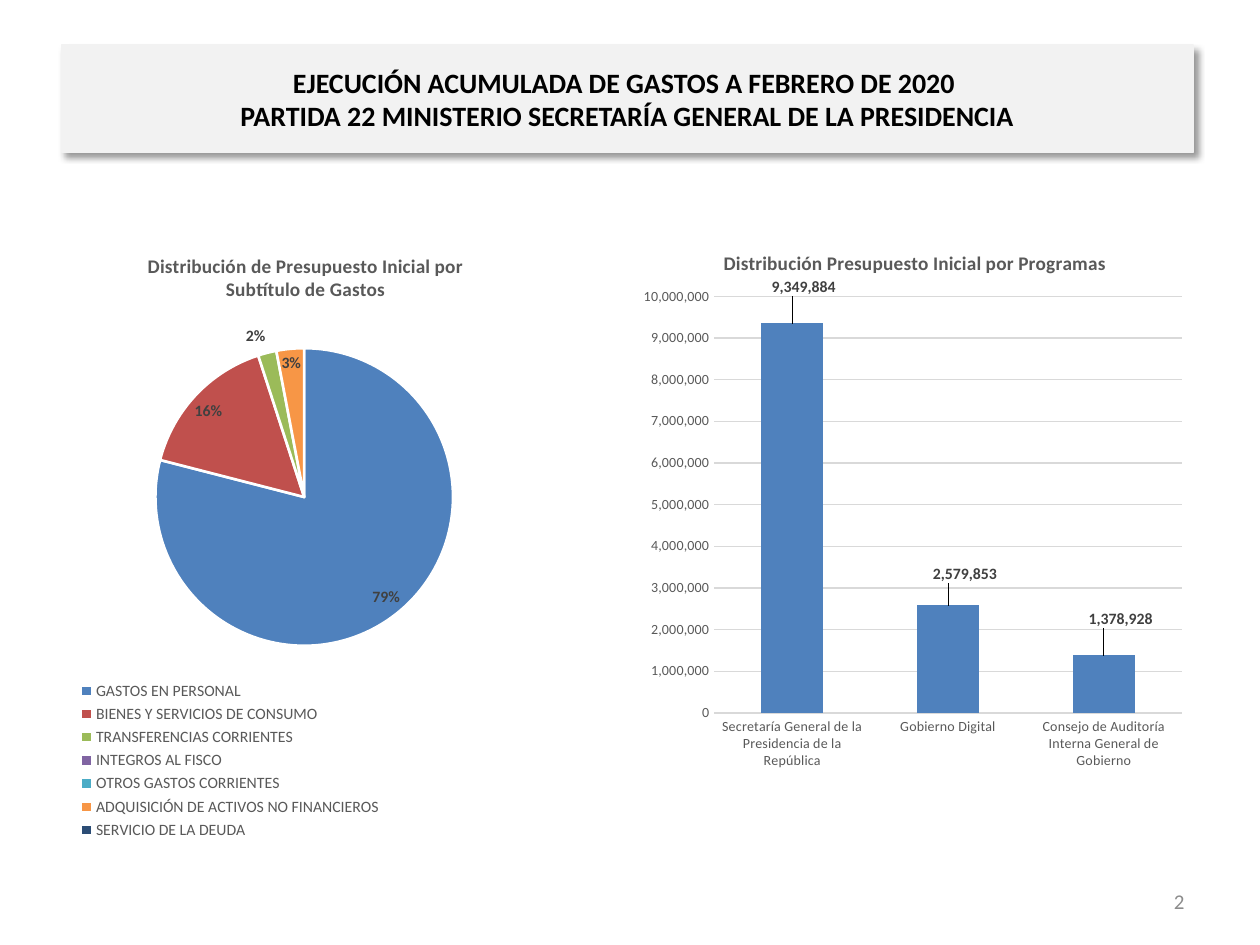
"""Build the budget distribution slide with a pie and a column chart."""
from lxml.etree import SubElement
from pptx import Presentation
from pptx.chart.data import CategoryChartData
from pptx.dml.color import RGBColor
from pptx.enum.chart import XL_CHART_TYPE, XL_LABEL_POSITION, XL_LEGEND_POSITION, XL_TICK_MARK
from pptx.enum.text import MSO_ANCHOR, MSO_AUTO_SIZE, PP_ALIGN
from pptx.oxml import parse_xml
from pptx.oxml.ns import nsdecls, qn
from pptx.util import Cm, Pt

BLACK = RGBColor(0x00, 0x00, 0x00)
WHITE = RGBColor(0xFF, 0xFF, 0xFF)
PANEL = RGBColor(0xF2, 0xF2, 0xF2)
GRID = RGBColor(0xD9, 0xD9, 0xD9)
LABEL = RGBColor(0x40, 0x40, 0x40)
MUTED = RGBColor(0x59, 0x59, 0x59)
NUMBER = RGBColor(0x8C, 0x8C, 0x8C)
BLUE = RGBColor(0x4F, 0x81, 0xBD)
RED = RGBColor(0xC0, 0x50, 0x4D)
GREEN = RGBColor(0x9B, 0xBB, 0x59)
PURPLE = RGBColor(0x80, 0x64, 0xA2)
TEAL = RGBColor(0x4B, 0xAC, 0xC6)
ORANGE = RGBColor(0xF7, 0x96, 0x46)
NAVY = RGBColor(0x2C, 0x4D, 0x75)


def style_font(font, size, color, bold=False):
    font.name = "Calibri"
    font.size = Pt(size)
    font.bold = bold
    font.color.rgb = color


def place(element, index, **settings):
    for old in element.findall(qn("c:layout")):
        element.remove(old)
    layout = parse_xml(f"<c:layout {nsdecls('c')}><c:manualLayout/></c:layout>")
    for tag, value in settings.items():
        SubElement(layout[0], qn(f"c:{tag}")).set("val", str(value))
    element.insert(index, layout)


deck = Presentation()
deck.slide_width, deck.slide_height = Cm(25.4), Cm(19.05)
page = deck.slides.add_slide(deck.slide_layouts[5])

title = page.shapes.title
title.left, title.top, title.width, title.height = Cm(1.24), Cm(0.91), Cm(22.81), Cm(2.16)
title.fill.solid()
title.fill.fore_color.rgb = PANEL
title.line.color.rgb = PANEL
title.line.width = Pt(0.75)
title._element.spPr.append(parse_xml(
    f'<a:effectLst {nsdecls("a")}><a:outerShdw blurRad="50800" dist="38100" dir="2700000" '
    'algn="tl" rotWithShape="0"><a:srgbClr val="000000"><a:alpha val="40000"/></a:srgbClr>'
    '</a:outerShdw></a:effectLst>'))
title.text_frame.auto_size = MSO_AUTO_SIZE.NONE
title.text_frame.vertical_anchor = MSO_ANCHOR.MIDDLE
para = title.text_frame.paragraphs[0]
para.alignment = PP_ALIGN.CENTER
for position, text in enumerate(("EJECUCIÓN ACUMULADA DE GASTOS A FEBRERO DE 2020 ",
                                 "PARTIDA 22 MINISTERIO SECRETARÍA GENERAL DE LA PRESIDENCIA")):
    if position:
        para.add_line_break()
    span = para.add_run()
    span.text = text
    style_font(span.font, 16, BLACK, True)

pie_data = CategoryChartData(number_format="#,##0")
pie_data.categories = [
    "GASTOS EN PERSONAL", "BIENES Y SERVICIOS DE CONSUMO", "TRANSFERENCIAS CORRIENTES",
    "INTEGROS AL FISCO", "OTROS GASTOS CORRIENTES",
    "ADQUISICIÓN DE ACTIVOS NO FINANCIEROS", "SERVICIO DE LA DEUDA"]
pie_data.add_series("Presupuesto Inicial", (79, 16, 2, None, None, 3, 0))
pie = page.shapes.add_chart(
    XL_CHART_TYPE.PIE, Cm(1.27), Cm(4.52), Cm(9.63), Cm(12.5), pie_data).chart

column_data = CategoryChartData(number_format="#,##0")
column_data.categories = [
    "Secretaría General de la Presidencia de la República", "Gobierno Digital",
    "Consejo de Auditoría Interna General de Gobierno"]
column_data.add_series("Presupuesto Inicial", (9349884, 2579853, 1378928))
columns = page.shapes.add_chart(
    XL_CHART_TYPE.COLUMN_CLUSTERED, Cm(12.7), Cm(4.52), Cm(11.35), Cm(11.2), column_data).chart

for chart, text, left, plot_area in (
        (pie, "Distribución de Presupuesto Inicial por Subtítulo de Gastos", 0.17,
         {"x": 0.19, "y": 0.2, "w": 0.63, "h": 0.48}),
        (columns, "Distribución Presupuesto Inicial por Programas", 0.16,
         {"x": 0.15, "y": 0.13, "w": 0.83, "h": 0.75})):
    style_font(chart.font, 10, BLACK)
    chart.has_title = True
    span = chart.chart_title.text_frame.paragraphs[0].add_run()
    span.text = text
    style_font(span.font, 11, MUTED, True)
    place(chart.chart_title._element, 1, xMode="edge", yMode="edge", x=left, y=0.04)
    place(chart._chartSpace.chart.plotArea, 0, layoutTarget="inner",
          xMode="edge", yMode="edge", **plot_area)
    chart.plots[0].has_data_labels = True
    style_font(chart.plots[0].data_labels.font, 9, LABEL, True)

pie.has_legend = True
pie.legend.position = XL_LEGEND_POSITION.BOTTOM
pie.legend.include_in_layout = False
style_font(pie.legend.font, 9, MUTED)
place(pie.legend._element, 1, xMode="edge", yMode="edge", x=0.02, y=0.73, w=0.66, h=0.27)
labels = pie.plots[0].data_labels
labels.show_value = False
labels.show_percentage = True
labels.number_format = "0%"
labels.number_format_is_linked = False
labels.position = XL_LABEL_POSITION.BEST_FIT
for index, color in enumerate((BLUE, RED, GREEN, PURPLE, TEAL, ORANGE, NAVY)):
    slice_format = pie.plots[0].series[0].points[index].format
    slice_format.fill.solid()
    slice_format.fill.fore_color.rgb = color
    slice_format.line.color.rgb = WHITE
    slice_format.line.width = Pt(1.5)

columns.has_legend = False
plot = columns.plots[0]
plot.gap_width = 150
plot.vary_by_categories = False
plot.data_labels.show_value = True
bars = plot.series[0]
bars.format.fill.solid()
bars.format.fill.fore_color.rgb = BLUE
for index, (right, down) in enumerate(((0.02, -0.04), (0.03, -0.03), (0.03, -0.04))):
    label = bars.points[index].data_label
    style_font(label.font, 9, LABEL, True)
    label.position = XL_LABEL_POSITION.OUTSIDE_END
    place(bars._element.dLbls.dLbl_lst[index], 1, x=right, y=down)
for axis in (columns.category_axis, columns.value_axis):
    axis.major_tick_mark = XL_TICK_MARK.NONE
    axis.minor_tick_mark = XL_TICK_MARK.NONE
    axis.format.line.fill.background()
    style_font(axis.tick_labels.font, 8, MUTED)
axis = columns.value_axis
axis.minimum_scale, axis.maximum_scale, axis.major_unit = 0, 10000000, 1000000
axis.tick_labels.number_format = "#,##0"
axis.tick_labels.number_format_is_linked = False
axis.major_gridlines.format.line.color.rgb = GRID
axis.major_gridlines.format.line.width = Pt(0.75)

box = page.shapes.add_textbox(Cm(18.21), Cm(17.65), Cm(5.92), Cm(1.02))
box.text_frame.word_wrap = True
box.text_frame.vertical_anchor = MSO_ANCHOR.MIDDLE
para = box.text_frame.paragraphs[0]
para.alignment = PP_ALIGN.RIGHT
span = para.add_run()
span.text = "2"
style_font(span.font, 12, NUMBER)

deck.save("out.pptx")
